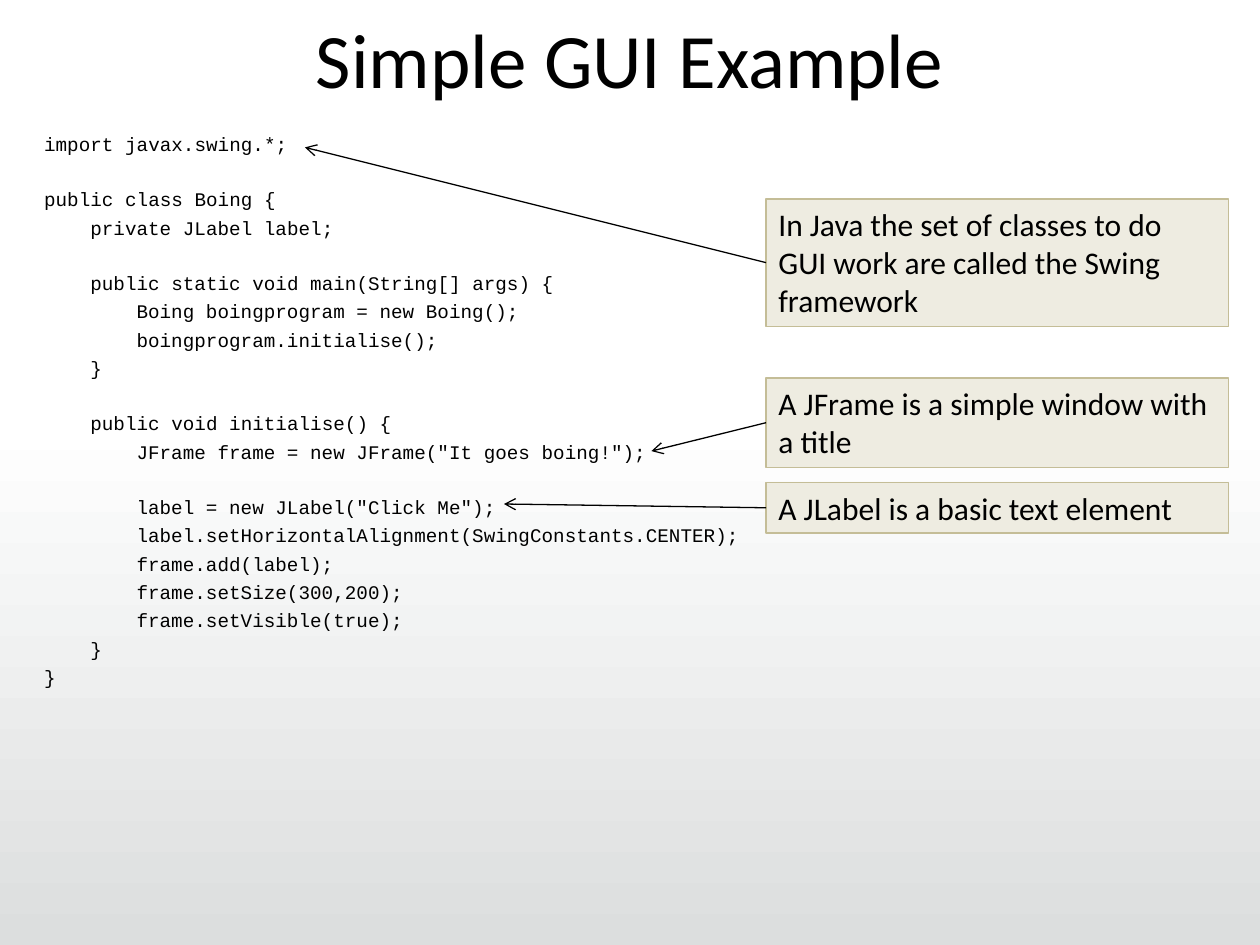
"""Build the "Simple GUI Example" slide: Java code with three callouts."""
from pptx import Presentation, util as u
from pptx.dml.color import RGBColor
from pptx.enum import shapes, text
from pptx.oxml.ns import qn
from lxml import etree

BLACK = RGBColor(0x00, 0x00, 0x00)
WHITE = RGBColor(0xFF, 0xFF, 0xFF)
GREY = RGBColor(0xDC, 0xDE, 0xDE)
TAN = RGBColor(0xEE, 0xEC, 0xE1)
TAN_EDGE = RGBColor(0xC4, 0xBD, 0x97)

TITLE = "Simple GUI Example"
CODE_BLOCKS = [
    [(0, "import javax.swing.*;")],
    [(0, "public class Boing {"),
     (1, "private JLabel label;")],
    [(1, "public static void main(String[] args) {"),
     (2, "Boing boingprogram = new Boing();"),
     (2, "boingprogram.initialise();"),
     (1, "}")],
    [(1, "public void initialise() {"),
     (2, 'JFrame frame = new JFrame("It goes boing!");')],
    [(2, 'label = new JLabel("Click Me");'),
     (2, "label.setHorizontalAlignment(SwingConstants.CENTER);"),
     (2, "frame.add(label);"),
     (2, "frame.setSize(300,200);"),
     (2, "frame.setVisible(true);"),
     (1, "}"),
     (0, "}")],
]
CALLOUTS = [
    ("In Java the set of classes to do GUI work are called the Swing framework",
     1.58, 1.01, (2.42, 1.17)),
    ("A JFrame is a simple window with a title", 3, 0.71, (5.17, 3.58)),
    ("A JLabel is a basic text element", 3.83, 0.4, (4, 4)),
]
CALLOUT_LEFT, CALLOUT_WIDTH = 6.08, 3.67
CODE_SIZE, LINE_GAP, LINE_PITCH = 11, 2.97, 15.43
INDENT = u.Pt(4 * 0.6 * CODE_SIZE)


def place(sp, left, top, width, height):
    sp.left, sp.top = u.Inches(left), u.Inches(top)
    sp.width, sp.height = u.Inches(width), u.Inches(height)


def style(p, name, size):
    p.font.name, p.font.size = name, u.Pt(size)
    p.font.color.rgb = BLACK


def add_backdrop(s):
    sp = s.shapes.add_shape(shapes.MSO_SHAPE.RECTANGLE, 0, u.Inches(3.33),
                            u.Inches(10), u.Inches(4.17))
    sp.shadow.inherit = False
    sp.line.fill.background()
    sp.fill.gradient()
    sp.fill.gradient_angle = 270
    for stop, color in zip(sp.fill.gradient_stops, (WHITE, GREY)):
        stop.color.rgb = color
    s.shapes._spTree.insert(2, sp._element)


def add_code(sp):
    place(sp, 0.25, 1, 9.5, 6.58)
    tf = sp.text_frame
    tf.auto_size = text.MSO_AUTO_SIZE.NONE
    p = tf.paragraphs[0]
    for b, block in enumerate(CODE_BLOCKS):
        for i, (level, line) in enumerate(block):
            if b or i:
                p = tf.add_paragraph()
            p.text = line
            style(p, "Courier New", CODE_SIZE)
            p.space_before = u.Pt(LINE_GAP + (LINE_PITCH if b and not i else 0))
            pPr = p._p.get_or_add_pPr()
            pPr.set("marL", str(level * INDENT))
            pPr.set("indent", "0")
            bullet = etree.Element(qn("a:buNone"))
            pPr.insert_element_before(bullet, "a:tabLst", "a:defRPr", "a:extLst")


def add_callout(s, label, top, height, target):
    sp = s.shapes.add_shape(shapes.MSO_SHAPE.RECTANGLE, 0, 0, 0, 0)
    place(sp, CALLOUT_LEFT, top, CALLOUT_WIDTH, height)
    sp.shadow.inherit = False
    sp.fill.solid()
    sp.fill.fore_color.rgb = TAN
    sp.line.color.rgb = TAN_EDGE
    sp.line.width = u.Pt(0.75)
    tf = sp.text_frame
    tf.word_wrap = True
    tf.auto_size = text.MSO_AUTO_SIZE.SHAPE_TO_FIT_TEXT
    tf.vertical_anchor = text.MSO_ANCHOR.TOP
    p = tf.paragraphs[0]
    p.text = label
    p.alignment = text.PP_ALIGN.LEFT
    style(p, "Calibri", 18)

    x, y = target
    arrow = s.shapes.add_connector(shapes.MSO_CONNECTOR.STRAIGHT, 0, 0,
                                   u.Inches(x), u.Inches(y))
    arrow.begin_connect(sp, 1)
    arrow.line.color.rgb = BLACK
    arrow.line.width = u.Pt(0.75)
    etree.SubElement(arrow.line._get_or_add_ln(), qn("a:tailEnd"), type="arrow")
    etree.SubElement(arrow._element.spPr, qn("a:effectLst"))


def main():
    prs = Presentation()
    prs.slide_width, prs.slide_height = u.Inches(10), u.Inches(7.5)
    s = prs.slides.add_slide(prs.slide_layouts[1])
    s.background.fill.solid()
    s.background.fill.fore_color.rgb = WHITE
    add_backdrop(s)

    title = s.shapes.title
    place(title, 0.5, -0.17, 9, 1.25)
    title.text_frame.vertical_anchor = text.MSO_ANCHOR.MIDDLE
    p = title.text_frame.paragraphs[0]
    p.text = TITLE
    p.alignment = text.PP_ALIGN.CENTER
    style(p, "Calibri", 44)

    add_code(s.placeholders[1])
    for callout in CALLOUTS:
        add_callout(s, *callout)
    prs.save("out.pptx")


if __name__ == "__main__":
    main()
